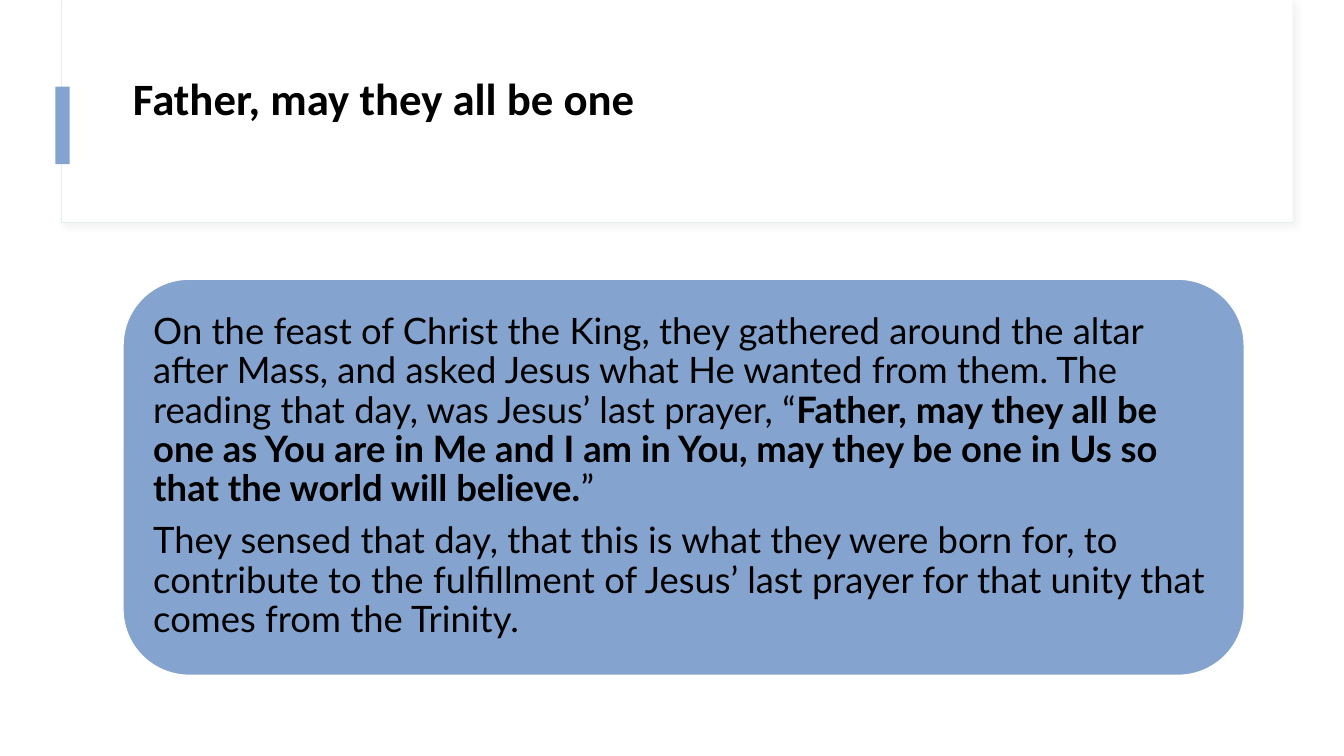
from dataclasses import dataclass
from typing import Optional

from lxml.etree import SubElement as Sub
from pptx import Presentation
from pptx.dml.color import RGBColor as Rgb
from pptx.enum.shapes import MSO_SHAPE as Form
from pptx.enum.text import MSO_ANCHOR as Anchor
from pptx.oxml.ns import qn
from pptx.util import Inches, Pt

HEX = {"white": "FFFFFF", "blue": "84A4CF", "mint": "E4F0F0",
       "shade": "D9D9D9", "black": "000000"}


@dataclass
class Panel:
    box: tuple[float, float, float, float]
    fill: str
    line: Optional[str] = None
    width: float = 0
    form: Form = Form.RECTANGLE
    shade: bool = False


@dataclass
class Words:
    box: tuple[float, float, float, float]
    paras: list[list[tuple[str, bool]]]  # runs: text, bold
    font: str
    size: float
    anchor: Anchor
    pads: tuple[float, float]  # side, top and bottom
    after: float = 0


PANELS = [
    # Header frame and its accent bar
    Panel((0.61, 0, 12.21, 2.21), "white", "mint", 0.75, shade=True),
    Panel((0.62, 0, 12.2, 2.2), "white"),
    Panel((0.55, 0.86, 0.14, 0.77), "blue"),
    # Card behind the story
    Panel((1.22, 2.77, 11.12, 3.93), "blue", "white", 1,
          Form.ROUNDED_RECTANGLE),
]

TEXTS = [
    Words((1.22, 0.6, 11.12, 1.29), [[("Father, may they all be one", True)]],
          "Calibri", 32, Anchor.TOP, (0.1, 0.16)),
    Words((1.41, 2.96, 10.74, 3.54), [
        [("On the feast of Christ the King, they gathered around the altar "
          "after Mass, and asked Jesus what He wanted from them. The reading "
          "that day, was Jesus’ last prayer, “", False),
         ("Father, may they all be one as You are in Me and I am in You, may "
          "they be one in Us so that the world will believe.", True),
         ("”", False)],
        [("They sensed that day, that this is what they were born for, to "
          "contribute to the fulfillment of Jesus’ last prayer for that unity "
          "that comes from the Trinity.", False)],
    ], "Lato", 26, Anchor.MIDDLE, (0.11, 0.11), 9.1),
]


def color(name: str) -> Rgb:
    return Rgb.from_string(HEX[name])


def add_shade(shape) -> None:
    """Cast a soft shadow to the lower right."""
    glow = shape._element.spPr.find(qn("a:effectLst"))
    cast = Sub(glow, qn("a:outerShdw"), blurRad=str(Pt(4)), dist=str(Pt(3)),
               dir=str(45 * 60000), algn="tl", rotWithShape="0")
    tint = Sub(cast, qn("a:srgbClr"), val=HEX["shade"])
    Sub(tint, qn("a:alpha"), val="30000")


def draw_panel(slide, panel: Panel) -> None:
    shape = slide.shapes.add_shape(panel.form, *map(Inches, panel.box))
    shape.shadow.inherit = False
    shape.fill.solid()
    shape.fill.fore_color.rgb = color(panel.fill)
    if panel.line:
        shape.line.color.rgb = color(panel.line)
        shape.line.width = Pt(panel.width)
    else:
        shape.line.fill.background()
    if panel.shade:
        add_shade(shape)


def draw_words(slide, words: Words) -> None:
    frame = slide.shapes.add_textbox(*map(Inches, words.box)).text_frame
    frame.word_wrap = True
    frame.vertical_anchor = words.anchor
    side, edge = map(Inches, words.pads)
    frame.margin_left = frame.margin_right = side
    frame.margin_top = frame.margin_bottom = edge
    for i, runs in enumerate(words.paras):
        para = frame.add_paragraph() if i else frame.paragraphs[0]
        para.line_spacing = 0.9
        para.space_after = Pt(words.after)
        for text, bold in runs:
            run = para.add_run()
            run.text = text
            run.font.name = words.font
            run.font.size = Pt(words.size)
            run.font.bold = bold
            run.font.color.rgb = color("black")


def main() -> None:
    deck = Presentation()
    deck.slide_width, deck.slide_height = Inches(13.33), Inches(7.5)
    slide = deck.slides.add_slide(deck.slide_layouts[6])
    for panel in PANELS:
        draw_panel(slide, panel)
    for words in TEXTS:
        draw_words(slide, words)
    deck.save("out.pptx")


if __name__ == "__main__":
    main()
